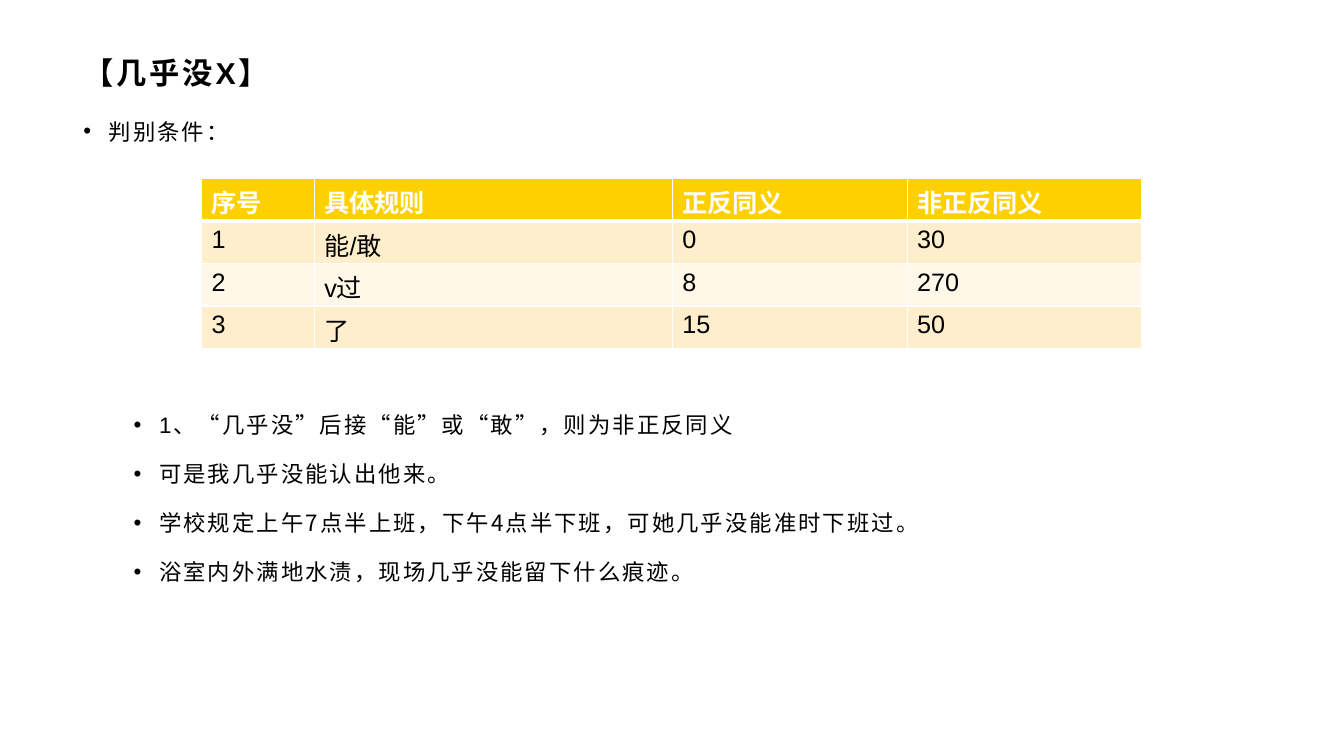
import pptx
import pptx.util
import pptx.dml.color
import pptx.enum.text
import pptx.oxml
import pptx.oxml.ns
from dataclasses import dataclass
from lxml import etree

Cm, Pt = pptx.util.Cm, pptx.util.Pt
qn = pptx.oxml.ns.qn


@dataclass(frozen=True)
class Theme:
    latin: str = "Arial"
    asian: str = "Noto Sans CJK SC"
    ink: str = "000000"
    white: str = "FFFFFF"
    gold: str = "FED000"
    bands: tuple = ("FFEECC", "FFF7E7")
    title: float = 21.6
    body: float = 16
    cell: float = 18


theme = Theme()

HEAD = "【几乎没X】"
LEAD = "判别条件："
RULE = "1、“几乎没”后接“能”或“敢”，则为非正反同义"
CASES = [
    "可是我几乎没能认出他来。",
    "学校规定上午7点半上班，下午4点半下班，可她几乎没能准时下班过。",
    "浴室内外满地水渍，现场几乎没能留下什么痕迹。",
]
ROWS = [
    ("序号", "具体规则", "正反同义", "非正反同义"),
    ("1", "能/敢", "0", "30"),
    ("2", "v过", "8", "270"),
    ("3", "了", "15", "50"),
]


def rgb(code):
    return pptx.dml.color.RGBColor.from_string(code)


def style(para, size, color=theme.ink, bold=False, track=0, face=theme.latin):
    """Format every run; track is the letter spacing in points."""
    for run in para.runs:
        font = run.font
        font.size, font.bold, font.name = Pt(size), bold, face
        font.color.rgb = rgb(color)
        props = run._r.get_or_add_rPr()
        if track:
            props.set("spc", str(int(track * 100)))
        asian = etree.Element(qn("a:ea"), typeface=theme.asian)
        props.find(qn("a:latin")).addnext(asian)


def bullet(para, left):
    props = para._p.get_or_add_pPr()
    props.set("marL", str(Cm(left)))
    props.set("indent", str(-Cm(0.64)))
    etree.SubElement(props, qn("a:buFont"), typeface=theme.latin)
    etree.SubElement(props, qn("a:buChar"), char="•")


def border(cell, side, width):
    line = etree.SubElement(cell._tc.get_or_add_tcPr(), qn("a:ln" + side),
                            w=str(Pt(width)))
    fill = etree.SubElement(line, qn("a:solidFill"))
    etree.SubElement(fill, qn("a:srgbClr"), val=theme.white)


def add_title(slide, left, top, width, height):
    title = slide.shapes.title
    title.left, title.top = Cm(left), Cm(top)
    title.width, title.height = Cm(width), Cm(height)
    frame = title.text_frame
    frame.text = HEAD
    frame.auto_size = pptx.enum.text.MSO_AUTO_SIZE.NONE
    frame.vertical_anchor = pptx.enum.text.MSO_ANCHOR.MIDDLE
    para = frame.paragraphs[0]
    para.alignment = pptx.enum.text.PP_ALIGN.LEFT
    style(para, theme.title, bold=True, track=2)


def add_body(slide, left, top, width, height, gap):
    """Place the lead line, then the rule and its cases after a gap."""
    frame = slide.shapes.add_textbox(
        Cm(left), Cm(top), Cm(width), Cm(height)).text_frame
    frame.word_wrap = True
    for num, text in enumerate([LEAD, RULE, *CASES]):
        para = frame.add_paragraph() if num else frame.paragraphs[0]
        para.text = text
        para.level = min(num, 1)
        bullet(para, 1.91 if num else 0.64)
        para.line_spacing = 1.3
        para.space_before = Cm(gap) if num == 1 else Pt(0)
        para.space_after = Pt(10)
        face = theme.asian if text in CASES else theme.latin
        style(para, theme.body, track=1.5, face=face)


def add_rules(slide, left, top, widths, height):
    grid = slide.shapes.add_table(
        len(ROWS), len(widths), Cm(left), Cm(top),
        Cm(sum(widths)), Cm(height * len(ROWS))).table
    for col, width in zip(grid.columns, widths):
        col.width = Cm(width)
    for r, row in enumerate(ROWS):
        grid.rows[r].height = Cm(height)
        for c, text in enumerate(row):
            cell = grid.cell(r, c)
            for side in "LRTB":
                thick = (r, side) in ((0, "B"), (1, "T"))
                border(cell, side, 3 if thick else 1)
            cell.fill.solid()
            cell.fill.fore_color.rgb = rgb(
                theme.bands[(r - 1) % 2] if r else theme.gold)
            cell.text_frame.text = text
            style(cell.text_frame.paragraphs[0], theme.cell,
                  theme.ink if r else theme.white, bold=r == 0)


def main():
    deck = pptx.Presentation()
    deck.slide_width, deck.slide_height = Cm(33.87), Cm(19.05)
    slide = deck.slides.add_slide(deck.slide_layouts[5])
    left, width = 1.85, 30.15
    add_title(slide, left, 1.22, width, 1.22)
    add_body(slide, left, 2.64, width, 14.96, gap=6.17)
    add_rules(slide, 5.08, 4.5, (2.84, 9.02, 5.92, 5.92), 1.07)
    deck.save("out.pptx")


if __name__ == "__main__":
    main()
